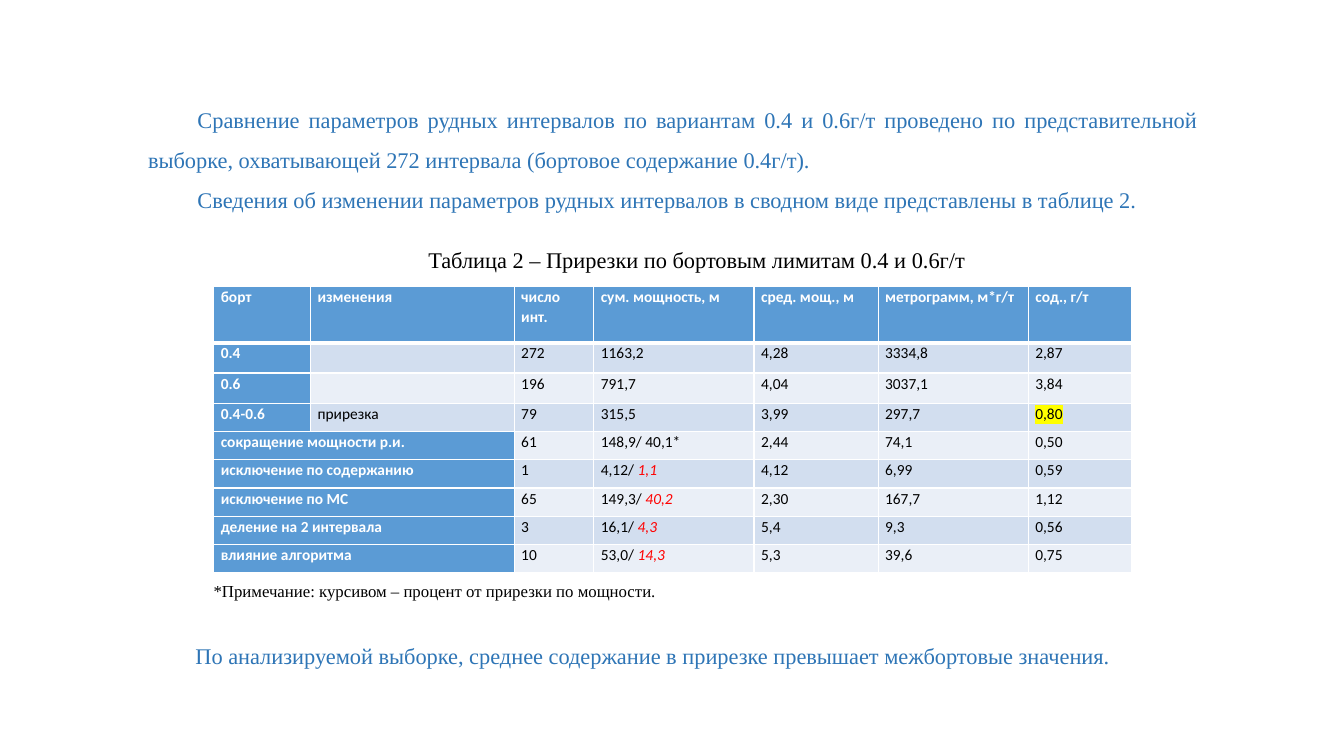
from lxml.etree import SubElement
from pptx import Presentation
from pptx.dml.color import RGBColor
from pptx.enum.text import MSO_AUTO_SIZE, PP_ALIGN
from pptx.oxml.ns import qn
from pptx.util import Pt

PX = 9144  # 100 px to the inch
INDENT = 49
BLUE, BLACK, WHITE, RED = "2E75B6", "000000", "FFFFFF", "FF0000"
HEADER_FILL, BANDS = "5B9BD5", ("EAEFF7", "D2DEEF")


def rgb(value):
    return RGBColor.from_string(value)


def format_paragraph(para, font_name, size, color, spacing, align=PP_ALIGN.JUSTIFY):
    para.alignment = align
    para.line_spacing = spacing
    para.font.name = font_name
    para.font.size = Pt(size)
    para.font.color.rgb = rgb(color)


deck = Presentation()
deck.slide_width, deck.slide_height = 1333 * PX, 750 * PX
page = deck.slides.add_slide(deck.slide_layouts[6])

# Paragraphs around the table: place, wrapping, size, colour, alignment, texts
text_boxes = [
    ((137, 87, 1061, 127), True, 16, BLUE, PP_ALIGN.JUSTIFY, [
        "Сравнение параметров рудных интервалов по вариантам 0.4 и 0.6г/т проведено "
        "по представительной выборке, охватывающей 272 интервала (бортовое содержание 0.4г/т).",
        "Сведения об изменении параметров рудных интервалов в сводном виде "
        "представлены в таблице 2."]),
    ((212, 226, 909, 46), True, 16, BLACK, PP_ALIGN.CENTER,
     ["Таблица 2 – Прирезки по бортовым лимитам 0.4 и 0.6г/т"]),
    ((153, 561, 513, 37), False, 12, BLACK, PP_ALIGN.JUSTIFY,
     ["*Примечание: курсивом – процент от прирезки по мощности."]),
    ((135, 619, 1061, 46), True, 16, BLUE, PP_ALIGN.JUSTIFY,
     ["По анализируемой выборке, среднее содержание в прирезке превышает "
      "межбортовые значения."]),
]
for place, wrap, size, color, align, texts in text_boxes:
    box = page.shapes.add_textbox(*(length * PX for length in place))
    frame = box.text_frame
    frame.word_wrap = wrap
    frame.auto_size = MSO_AUTO_SIZE.SHAPE_TO_FIT_TEXT
    frame.text = "\n".join(texts)
    for para in frame.paragraphs:
        format_paragraph(para, "Times New Roman", size, color, 1.5, align)
        para._p.get_or_add_pPr().set("indent", str(INDENT * PX))

# Table content: None continues the cell on its left, a tuple adds an italic percentage
rows = [
    ["борт", "изменения", "число инт.", "сум. мощность, м", "сред. мощ., м",
     "метрограмм, м*г/т", "сод., г/т"],
    ["0.4", "", "272", "1163,2", "4,28", "3334,8", "2,87"],
    ["0.6", "", "196", "791,7", "4,04", "3037,1", "3,84"],
    ["0.4-0.6", "прирезка", "79", "315,5", "3,99", "297,7", "0,80"],
    ["сокращение мощности р.и.", None, "61", "148,9/ 40,1*", "2,44", "74,1", "0,50"],
    ["исключение по содержанию", None, "1", ("4,12/ ", "1,1"), "4,12", "6,99", "0,59"],
    ["исключение по МС", None, "65", ("149,3/ ", "40,2"), "2,30", "167,7", "1,12"],
    ["деление на 2 интервала", None, "3", ("16,1/ ", "4,3"), "5,4", "9,3", "0,56"],
    ["влияние алгоритма", None, "10", ("53,0/ ", "14,3"), "5,3", "39,6", "0,75"],
]
column_widths = [96, 202, 79, 159, 123, 149, 102]
row_heights = [56] + [28] * 8
highlighted = (3, 6)

table = page.shapes.add_table(len(rows), len(column_widths), 212 * PX, 284 * PX,
                              sum(column_widths) * PX, sum(row_heights) * PX).table
for column, width in zip(table.columns, column_widths):
    column.width = width * PX
for row, height in zip(table.rows, row_heights):
    row.height = height * PX

for r, values in enumerate(rows):
    for c, value in enumerate(values):
        cell = table.cell(r, c)
        heading = r == 0 or c == 0 or value is None

        # White cell borders, heavier under the header row
        for side in "LRTB":
            heavy = (r == 0 and side == "B") or (r == 1 and side == "T")
            line = SubElement(cell._tc.get_or_add_tcPr(), qn(f"a:ln{side}"),
                              w=str(Pt(3 if heavy else 1)))
            SubElement(SubElement(line, qn("a:solidFill")), qn("a:srgbClr"), val=WHITE)

        cell.fill.solid()
        cell.fill.fore_color.rgb = rgb(HEADER_FILL if heading else BANDS[r % 2])
        cell.margin_left = cell.margin_right = 7 * PX
        cell.margin_top = cell.margin_bottom = 0

        para = cell.text_frame.paragraphs[0]
        format_paragraph(para, "Calibri", 11, WHITE if heading else BLACK, 1.07)
        para.font.bold = heading
        if value is None:
            table.cell(r, c - 1).merge(cell)
            continue
        parts = value if isinstance(value, tuple) else (value,)
        for i, part in enumerate(parts):
            span = para.add_run()
            span.text = part
            if i == 1:
                span.font.italic = True
                span.font.color.rgb = rgb(RED)
            if (r, c) == highlighted:
                marker = SubElement(span._r.get_or_add_rPr(), qn("a:highlight"))
                SubElement(marker, qn("a:srgbClr"), val="FFFF00")

deck.save("out.pptx")
